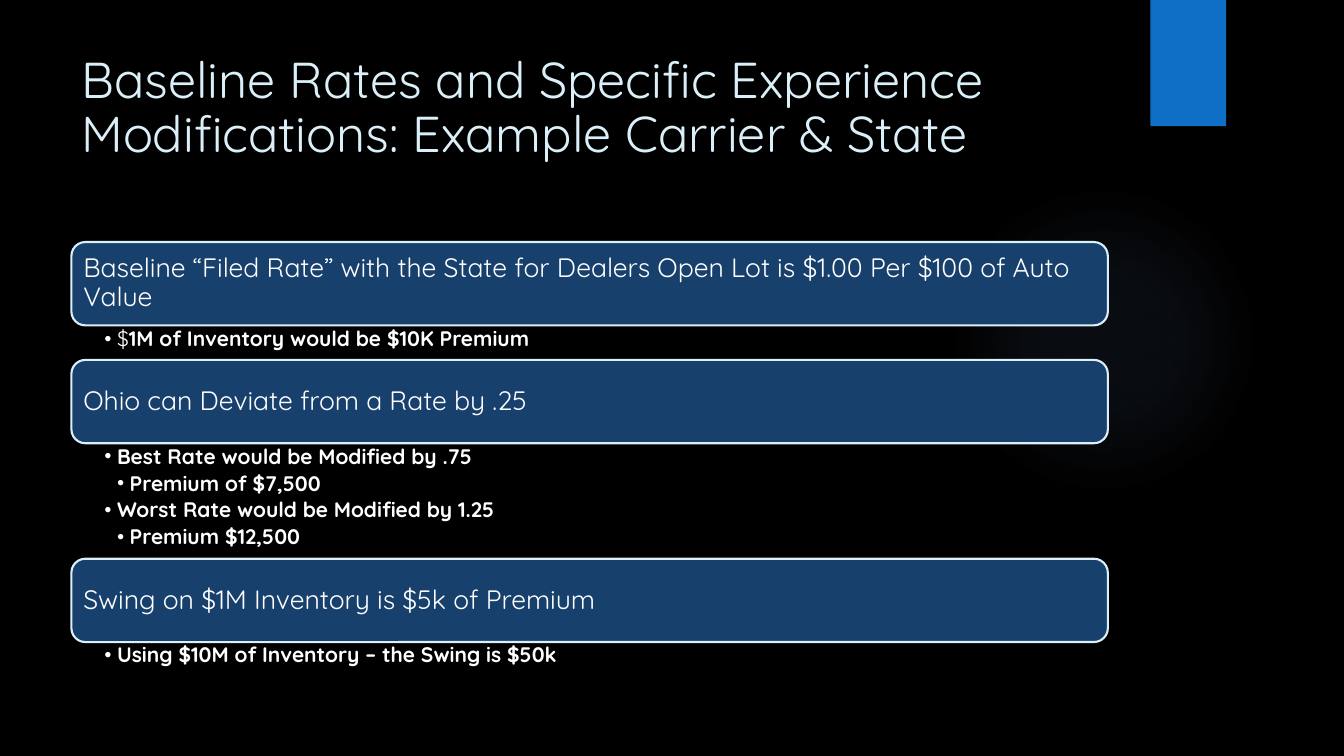
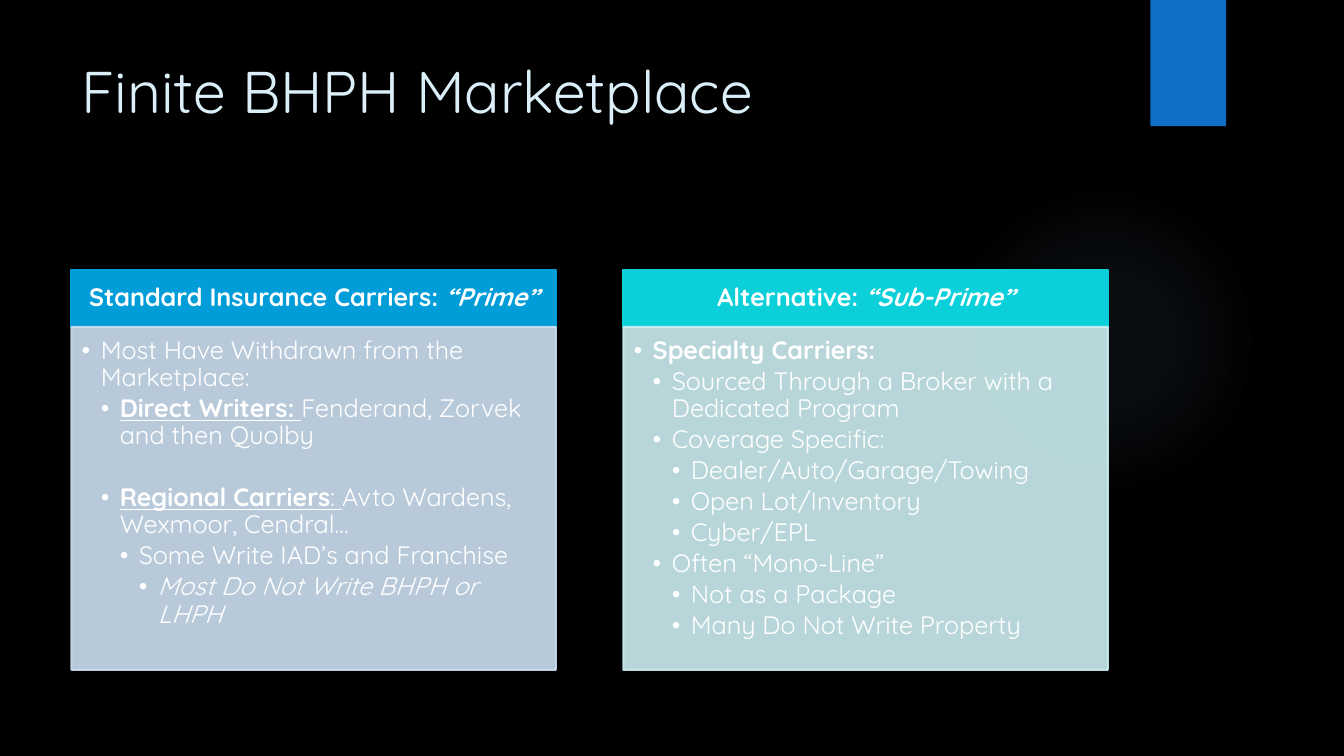
from lxml import etree
from pptx import Presentation
from pptx.dml.color import RGBColor
from pptx.enum.shapes import MSO_SHAPE
from pptx.enum.text import MSO_ANCHOR, MSO_AUTO_SIZE, PP_ALIGN
from pptx.oxml import parse_xml
from pptx.oxml.ns import nsdecls, qn
from pptx.util import Cm, Pt

RECTANGLE, ROUNDED, OVAL = MSO_SHAPE.RECTANGLE, MSO_SHAPE.ROUNDED_RECTANGLE, MSO_SHAPE.OVAL
TOP, MIDDLE = MSO_ANCHOR.TOP, MSO_ANCHOR.MIDDLE
LEFT, CENTER = PP_ALIGN.LEFT, PP_ALIGN.CENTER
NO_AUTOFIT = MSO_AUTO_SIZE.NONE

FONT = "Quicksand"
BLACK = RGBColor(0x00, 0x00, 0x00)
WHITE = RGBColor(0xFF, 0xFF, 0xFF)
PALE_BLUE = RGBColor(0xDB, 0xEF, 0xF9)
NAVY = RGBColor(0x17, 0x40, 0x6D)
TAB_BLUE = RGBColor(0x0F, 0x6F, 0xC6)
GLOW_BLUE = RGBColor(0x82, 0xB1, 0xE5)
PRIME_BLUE = RGBColor(0x00, 0x9D, 0xD9)
PRIME_TINT = RGBColor(0xCC, 0xDF, 0xF1)
SUBPRIME_TEAL = RGBColor(0x0B, 0xD0, 0xD9)
SUBPRIME_TINT = RGBColor(0xCC, 0xEE, 0xF1)

# Measures in centimetres
MARGIN = 1.8
CONTENT_WIDTH = 26.12

# Text: a line is (level, runs), a run is (text, style letters b, i, u)
RATE_SECTIONS = [
    ("Baseline “Filed Rate” with the State for Dealers Open Lot is $1.00 Per $100 of Auto Value",
     [(1, [("$", ""), ("1M of Inventory would be $10K Premium", "b")])]),
    ("Ohio can Deviate from a Rate by .25",
     [(1, [("Best Rate would be Modified by .75", "b")]),
      (2, [("Premium of $7,500", "b")]),
      (1, [("Worst Rate would be Modified by 1.25", "b")]),
      (2, [("Premium $12,500", "b")])]),
    ("Swing on $1M Inventory is $5k of Premium",
     [(1, [("Using $10M of Inventory – the Swing is $50k", "b")])]),
]
PRIME_LINES = [
    (1, [("Most Have Withdrawn from the Marketplace:", "")]),
    (2, [("Direct Writers:", "bu"), (" ", "u"), ("Fenderand, Zorvek and then Quolby", "")]),
    (2, [("Regional Carriers", "bu"), (": ", "u"), ("Avto Wardens, Wexmoor, Cendral…", "")]),
    (3, [("Some Write IAD’s and Franchise", "")]),
    (4, [("Most Do Not Write BHPH or LHPH", "i")]),
]
SUBPRIME_LINES = [
    (1, [("Specialty Carriers:", "b")]),
    (2, [("Sourced Through a Broker with a Dedicated Program", "")]),
    (2, [("Coverage Specific:", "")]),
    (3, [("Dealer/Auto/Garage/Towing", "")]),
    (3, [("Open Lot/Inventory", "")]),
    (3, [("Cyber/EPL", "")]),
    (2, [("Often “Mono-Line”", "")]),
    (3, [("Not as a Package", "")]),
    (3, [("Many Do Not Write Property", "")]),
]
CARRIER_COLUMNS = [
    ([("Standard Insurance Carriers: ", "b"), ("“Prime”", "bi")],
     PRIME_LINES, PRIME_BLUE, PRIME_TINT),
    ([("Alternative: ", "b"), ("“Sub-Prime”", "bi")],
     SUBPRIME_LINES, SUBPRIME_TEAL, SUBPRIME_TINT),
]


# Shapes
def add_block(slide, kind, box, fill, line=None):
    shape = slide.shapes.add_shape(kind, *map(Cm, box))
    shape.shadow.inherit = False
    shape.fill.solid()
    shape.fill.fore_color.rgb = fill
    if line is None:
        shape.line.fill.background()
    else:
        shape.line.color.rgb = line
        shape.line.width = Pt(1.5)
    return shape


def set_opacity(shape, percent):
    for color in shape.element.spPr.iter(qn("a:srgbClr")):
        etree.SubElement(color, qn("a:alpha"), val=str(percent * 1000))


def set_glow(shape):
    stops = "".join(
        f'<a:gs pos="{position * 1000}"><a:srgbClr val="{GLOW_BLUE}">'
        f'<a:alpha val="{opacity * 1000}"/></a:srgbClr></a:gs>'
        for position, opacity in ((0, 7), (36, 6), (69, 0)))
    gradient = parse_xml(
        f'<a:gradFill {nsdecls("a")}><a:gsLst>{stops}</a:gsLst><a:path path="circle">'
        '<a:fillToRect l="50000" t="50000" r="50000" b="50000"/></a:path></a:gradFill>')
    solid = shape.element.spPr.find(qn("a:solidFill"))
    shape.element.spPr.replace(solid, gradient)


# Text
def set_frame(shape, insets, anchor=TOP):
    frame = shape.text_frame
    frame.word_wrap = True
    frame.auto_size = NO_AUTOFIT
    frame.vertical_anchor = anchor
    (frame.margin_left, frame.margin_top,
     frame.margin_right, frame.margin_bottom) = map(Cm, insets)
    return frame


def set_style(font, style):
    font.bold = "b" in style
    font.italic = "i" in style
    font.underline = "u" in style


def write_runs(paragraph, runs, size, color=WHITE, align=LEFT, spacing=0.9):
    paragraph.alignment = align
    paragraph.line_spacing = spacing
    font = paragraph.font
    font.name, font.size, font.color.rgb = FONT, Pt(size), color
    for text, style in runs:
        run = paragraph.add_run()
        run.text = text
        set_style(font if len(runs) == 1 else run.font, style)


def write_bullets(frame, lines, size, step, space_after):
    for index, (level, runs) in enumerate(lines):
        paragraph = frame.paragraphs[0] if index == 0 else frame.add_paragraph()
        paragraph.level = level - 1
        properties = paragraph._p.get_or_add_pPr()
        properties.set("marL", str(Cm(step * level)))
        properties.set("indent", str(-Cm(step)))
        etree.SubElement(properties, qn("a:buFont"), typeface=FONT)
        etree.SubElement(properties, qn("a:buChar"), char="•")
        paragraph.space_after = Pt(space_after)
        write_runs(paragraph, runs, size)


# Shared look
def decorate_layout(layout, slide):
    """Draw the glow and the corner tab, then place them behind the layout's text."""
    layout.background.fill.solid()
    layout.background.fill.fore_color.rgb = BLACK
    glow = add_block(slide, OVAL, (23.9, 4.65, 7.82, 7.82), GLOW_BLUE)
    set_glow(glow)
    tab = add_block(slide, RECTANGLE, (28.99, 0, 1.91, 3.18), TAB_BLUE)
    for shape in (tab, glow):
        layout.shapes.element.insert(2, shape.element)


def set_title(slide, text, size, spacing):
    title = slide.shapes.title
    title.left, title.top, title.width, title.height = map(
        Cm, (MARGIN, 1.25, CONTENT_WIDTH, 3.89))
    frame = set_frame(title, (0.25, 0.13, 0.25, 0.13))
    write_runs(frame.paragraphs[0], [(text, "")], size, PALE_BLUE, spacing=spacing)


# Content elements
def add_rate_sections(slide, top):
    bar_height = 2.1
    for heading, lines in RATE_SECTIONS:
        bar = add_block(slide, ROUNDED, (MARGIN, top, CONTENT_WIDTH, bar_height),
                        NAVY, PALE_BLUE)
        frame = set_frame(bar, (0.2, 0.2, 0.2, 0.2), MIDDLE)
        write_runs(frame.paragraphs[0], [(heading, "")], 19)
        top += bar_height

        list_height = 0.19 + 0.68 * len(lines)
        details = slide.shapes.add_textbox(
            *map(Cm, (MARGIN, top, CONTENT_WIDTH, list_height)))
        write_bullets(set_frame(details, (0.83, 0.07, 0.38, 0.07)), lines, 15, 0.32, 3)
        top += list_height


def add_carrier_columns(slide, top):
    gap, head_height, body_height = 1.7, 1.44, 8.64
    width = (CONTENT_WIDTH - gap) / 2
    for index, (heading, lines, color, tint) in enumerate(CARRIER_COLUMNS):
        left = MARGIN + index * (width + gap)
        head = add_block(slide, RECTANGLE, (left, top, width, head_height), color, color)
        frame = set_frame(head, (0.36, 0.2, 0.36, 0.2), MIDDLE)
        write_runs(frame.paragraphs[0], heading, 18, align=CENTER)

        body = add_block(slide, RECTANGLE,
                         (left, top + head_height, width, body_height), tint, tint)
        set_opacity(body, 90)
        frame = set_frame(body, (0.26, 0.27, 0.36, 0.41))
        write_bullets(frame, lines, 18, 0.48, 2.7)
        if lines is PRIME_LINES:
            # One line of air between direct writers and regional carriers
            frame.paragraphs[2].space_before = Pt(22)


def main():
    presentation = Presentation()
    presentation.slide_width, presentation.slide_height = Cm(33.87), Cm(19.05)
    layout = presentation.slide_layouts[5]

    # Rates
    rates = presentation.slides.add_slide(layout)
    decorate_layout(layout, rates)
    set_title(rates, "Baseline Rates and Specific Experience Modifications: "
                     "Example Carrier & State", 36, 0.9)
    add_rate_sections(rates, 6.1)

    # Marketplace
    marketplace = presentation.slides.add_slide(layout)
    set_title(marketplace, "Finite BHPH Marketplace", 42, 1.0)
    add_carrier_columns(marketplace, 6.8)

    presentation.save("out.pptx")


if __name__ == "__main__":
    main()
